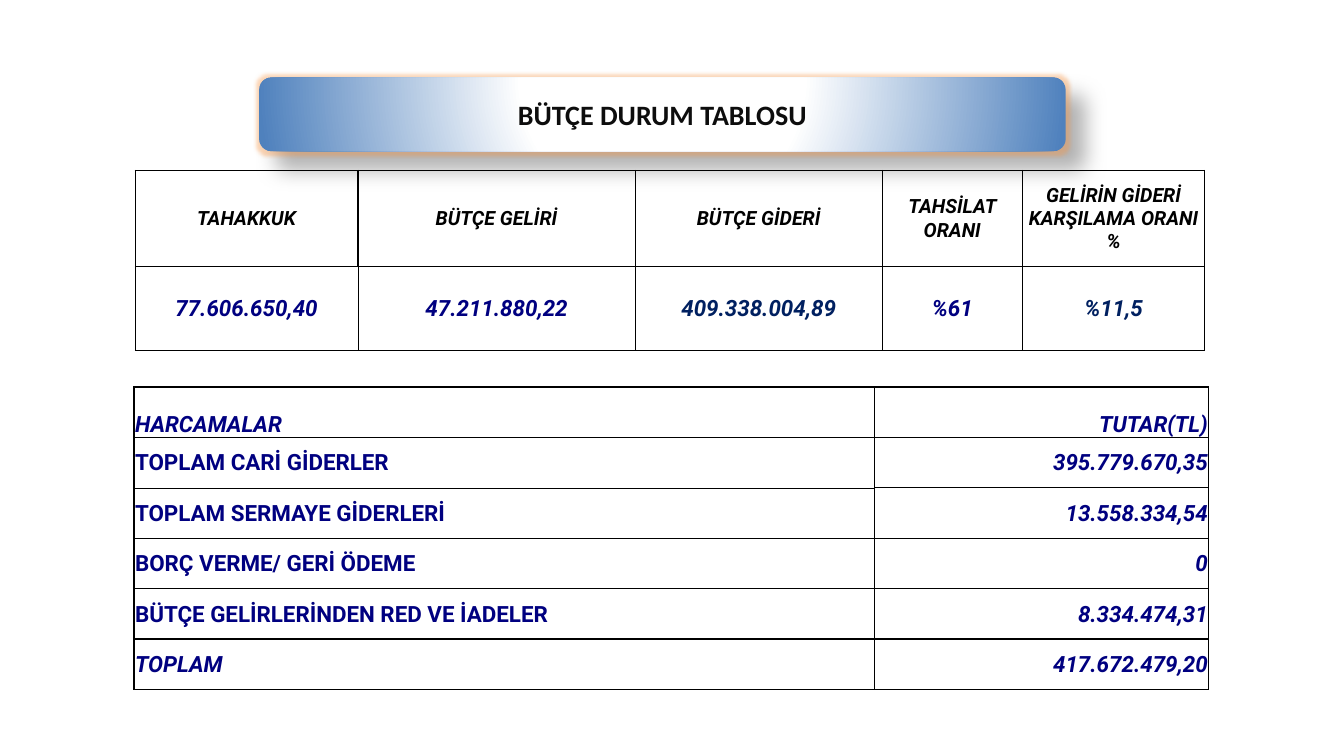
from lxml import etree
from pptx import Presentation
from pptx import util as u
from pptx.dml.color import RGBColor
from pptx.enum import shapes, text
from pptx.oxml import parse_xml
from pptx.oxml.ns import nsdecls, qn

LEFT, CENTER, RIGHT = text.PP_ALIGN.LEFT, text.PP_ALIGN.CENTER, text.PP_ALIGN.RIGHT
MIDDLE, BOTTOM = text.MSO_ANCHOR.MIDDLE, text.MSO_ANCHOR.BOTTOM
NAVY, DARK_BLUE, BLACK = "000080", "002060", "000000"
THIN, THICK = 0.5, 1

HEADINGS = ["TAHAKKUK", "BÜTÇE GELİRİ", "BÜTÇE GİDERİ", "TAHSİLAT ORANI",
            "GELİRİN GİDERİ KARŞILAMA ORANI %"]
BUDGET = [("77.606.650,40", NAVY), ("47.211.880,22", NAVY), ("409.338.004,89", DARK_BLUE),
          ("%61", NAVY), ("%11,5", DARK_BLUE)]
EXPENSES = [
    ("HARCAMALAR", "TUTAR(TL)"),
    ("TOPLAM CARİ GİDERLER", "395.779.670,35"),
    ("TOPLAM SERMAYE GİDERLERİ", "13.558.334,54"),
    ("BORÇ VERME/ GERİ ÖDEME", "0"),
    ("BÜTÇE GELİRLERİNDEN RED VE İADELER", "8.334.474,31"),
    ("TOPLAM", "417.672.479,20"),
]
BANNER_FILL = f"""<a:gradFill {nsdecls("a")} rotWithShape="1"><a:gsLst>
<a:gs pos="0"><a:srgbClr val="FFFFFF"/></a:gs>
<a:gs pos="35000"><a:srgbClr val="FFFFFF"/></a:gs>
<a:gs pos="100000"><a:srgbClr val="4F81BD"/></a:gs></a:gsLst>
<a:path path="circle"><a:fillToRect l="50000" t="-80000" r="50000" b="180000"/></a:path>
</a:gradFill>"""
BANNER_EFFECTS = f"""<a:effectLst {nsdecls("a")}>
<a:glow rad="63500"><a:srgbClr val="F79646"><a:alpha val="40000"/></a:srgbClr></a:glow>
<a:outerShdw blurRad="190500" dist="228600" dir="2700000" algn="tl" rotWithShape="0">
<a:srgbClr val="000000"><a:alpha val="30000"/></a:srgbClr></a:outerShdw></a:effectLst>"""


def color(value):
    return RGBColor.from_string(value)


class SlideBuilder:
    def __init__(self, slide):
        self.slide = slide
        self.font = {"name": "Roboto", "size": u.Pt(16), "bold": True, "italic": True}

    def add_words(self, frame, words, align, font_color, **changes):
        paragraph = frame.paragraphs[0]
        paragraph.alignment = align
        run = paragraph.add_run()
        run.text = words
        for name, value in {**self.font, **changes}.items():
            setattr(run.font, name, value)
        run.font.color.rgb = color(font_color)

    def banner(self, words, left, top, width, height):
        shape = self.slide.shapes.add_shape(
            shapes.MSO_SHAPE.ROUNDED_RECTANGLE,
            *(u.Inches(value) for value in (left, top, width, height)))
        properties = shape.element.spPr
        properties.append(parse_xml(BANNER_FILL))
        shape.line.fill.background()
        shape.shadow.inherit = False
        properties.replace(properties.find(qn("a:effectLst")), parse_xml(BANNER_EFFECTS))
        shape.text_frame.vertical_anchor = MIDDLE
        self.add_words(shape.text_frame, words, CENTER, "0D0D0D",
                       name="Calibri", size=u.Pt(20), italic=False)

    def table(self, left, top, widths, heights):
        frame = self.slide.shapes.add_table(
            len(heights), len(widths), u.Inches(left), u.Inches(top),
            u.Inches(sum(widths)), u.Inches(sum(heights)))
        table = frame.table
        table.first_row = table.horz_banding = False
        for column, width in zip(table.columns, widths):
            column.width = u.Inches(width)
        for row, height in zip(table.rows, heights):
            row.height = u.Inches(height)
        return table

    def cell(self, cell, words, align, font_color, borders, anchor=MIDDLE, **changes):
        """Fill one cell; borders are the left, top, right and bottom widths in points."""
        margin = u.Inches(0.01)
        layout = {"margin_left": margin, "margin_top": margin, "margin_right": margin,
                  "margin_bottom": 0, "vertical_anchor": anchor}
        for name, value in layout.items():
            setattr(cell, name, value)
        cell.fill.background()
        properties = cell._tc.get_or_add_tcPr()
        for index, (side, width) in enumerate(zip(("lnL", "lnT", "lnR", "lnB"), borders)):
            line = etree.Element(qn(f"a:{side}"), w=str(int(u.Pt(width))))
            fill = etree.SubElement(line, qn("a:solidFill"))
            etree.SubElement(fill, qn("a:srgbClr"), val=BLACK)
            # Borders have to come before the cell fill
            properties.insert(index, line)
        self.add_words(cell.text_frame, words, align, font_color, **changes)


def add_expenses(builder):
    table = builder.table(1.33, 3.84, [7.34, 3.32], [0.5] * len(EXPENSES))
    last = len(EXPENSES) - 1
    thick_rules = {0, 1, last, last + 1}
    for row, (label, amount) in enumerate(EXPENSES):
        top, bottom = (THICK if rule in thick_rules else THIN for rule in (row, row + 1))
        divider = THICK if row == last else THIN
        anchor = BOTTOM if row == 0 else MIDDLE
        builder.cell(table.cell(row, 0), label, LEFT, NAVY, (THICK, top, divider, bottom),
                     anchor, italic=row in (0, last))
        builder.cell(table.cell(row, 1), amount, RIGHT, NAVY,
                     (divider, THICK, THICK, THICK), anchor)


def add_budget(builder):
    table = builder.table(1.34, 1.69, [2.21, 2.75, 2.45, 1.39, 1.81], [0.95, 0.84])
    for column, (heading, (value, value_color)) in enumerate(zip(HEADINGS, BUDGET)):
        builder.cell(table.cell(0, column), heading, CENTER, BLACK, [THICK] * 4,
                     size=u.Pt(14))
        right = THICK if column == len(BUDGET) - 1 else THIN
        builder.cell(table.cell(1, column), value, CENTER, value_color,
                     (THIN, THICK, right, THIN))


def main():
    presentation = Presentation()
    presentation.slide_width = u.Inches(13.33)
    presentation.slide_height = u.Inches(7.5)
    builder = SlideBuilder(presentation.slides.add_slide(presentation.slide_layouts[6]))
    add_expenses(builder)
    add_budget(builder)
    builder.banner("BÜTÇE DURUM TABLOSU", 2.57, 0.77, 8, 0.73)
    presentation.save("out.pptx")


if __name__ == "__main__":
    main()
